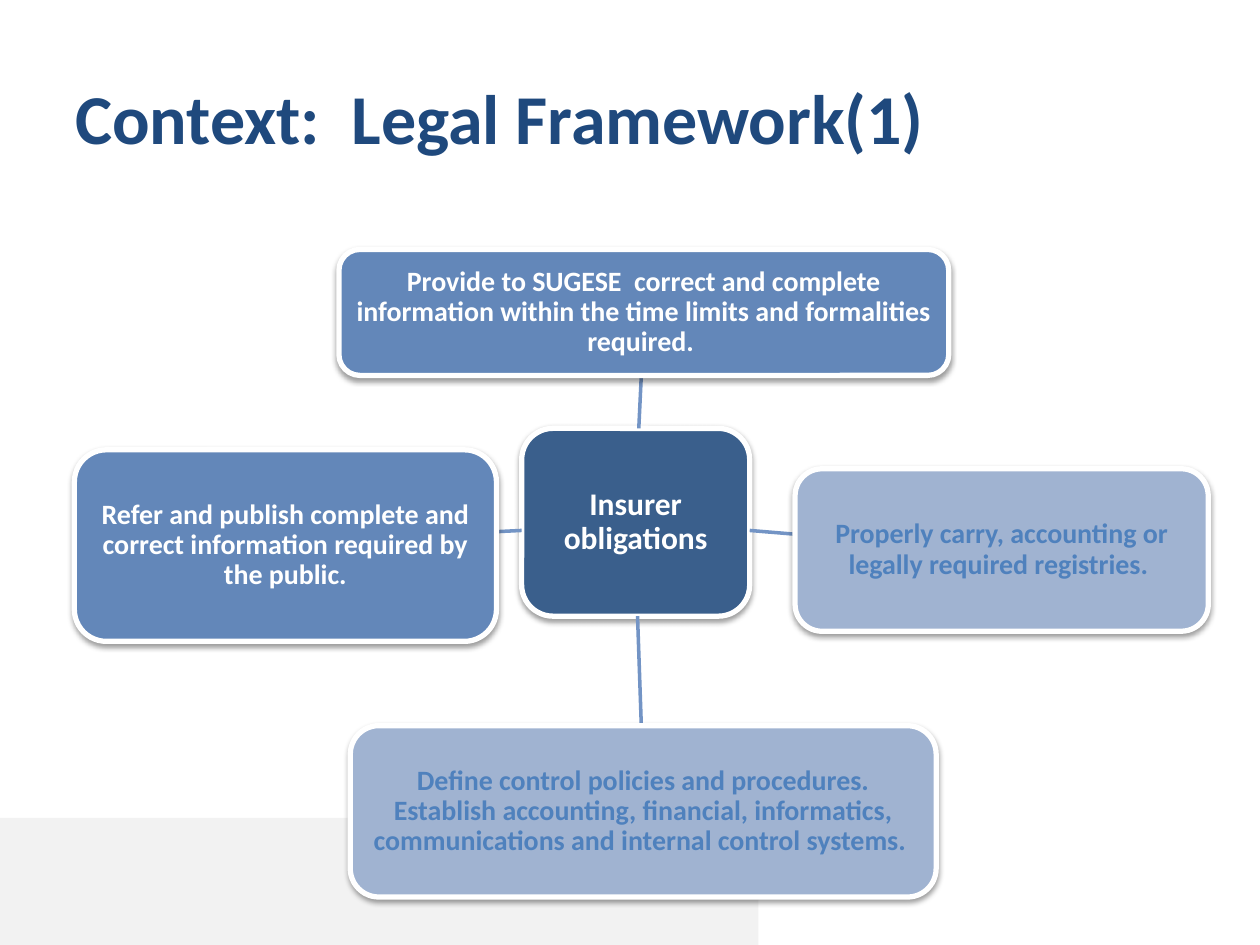
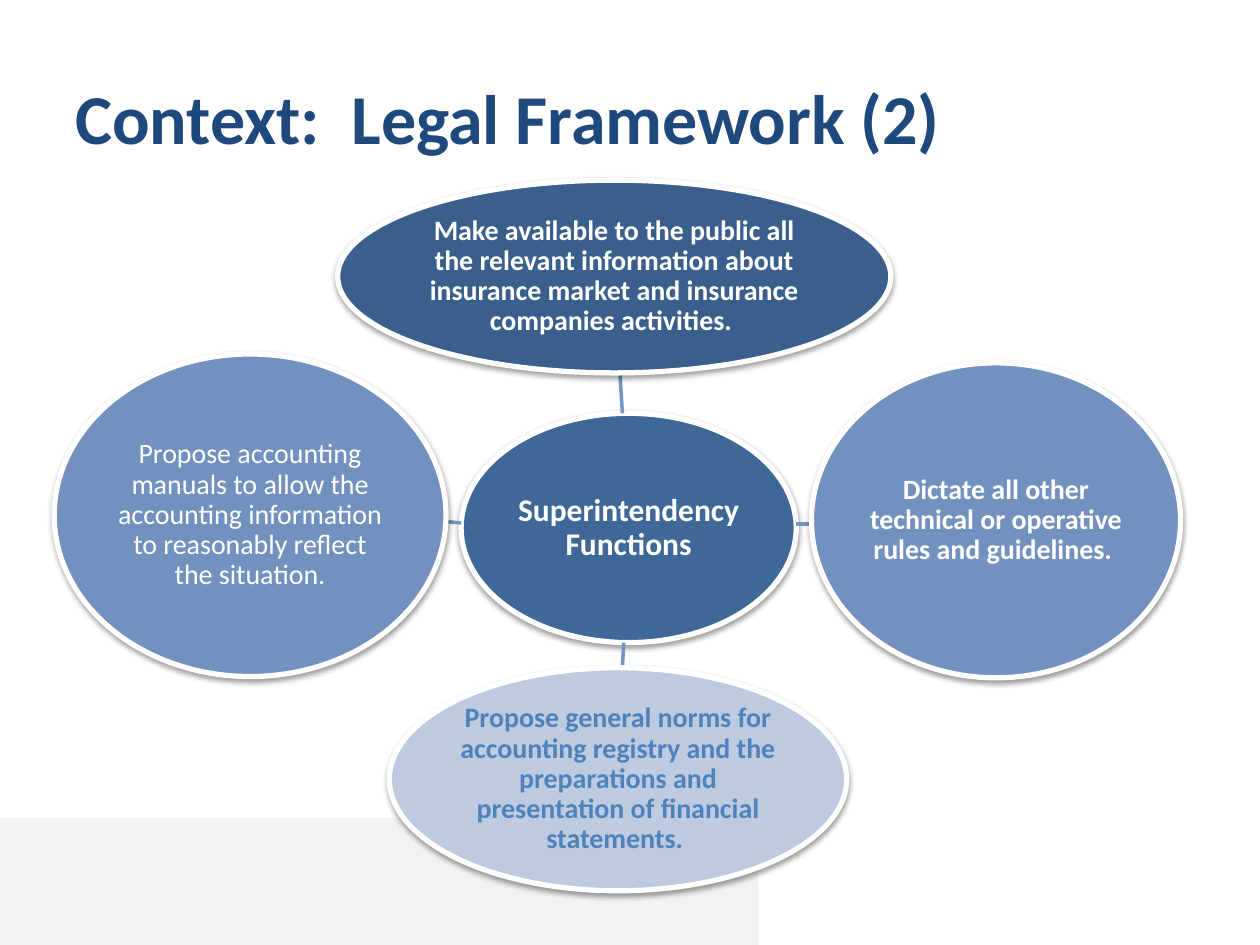
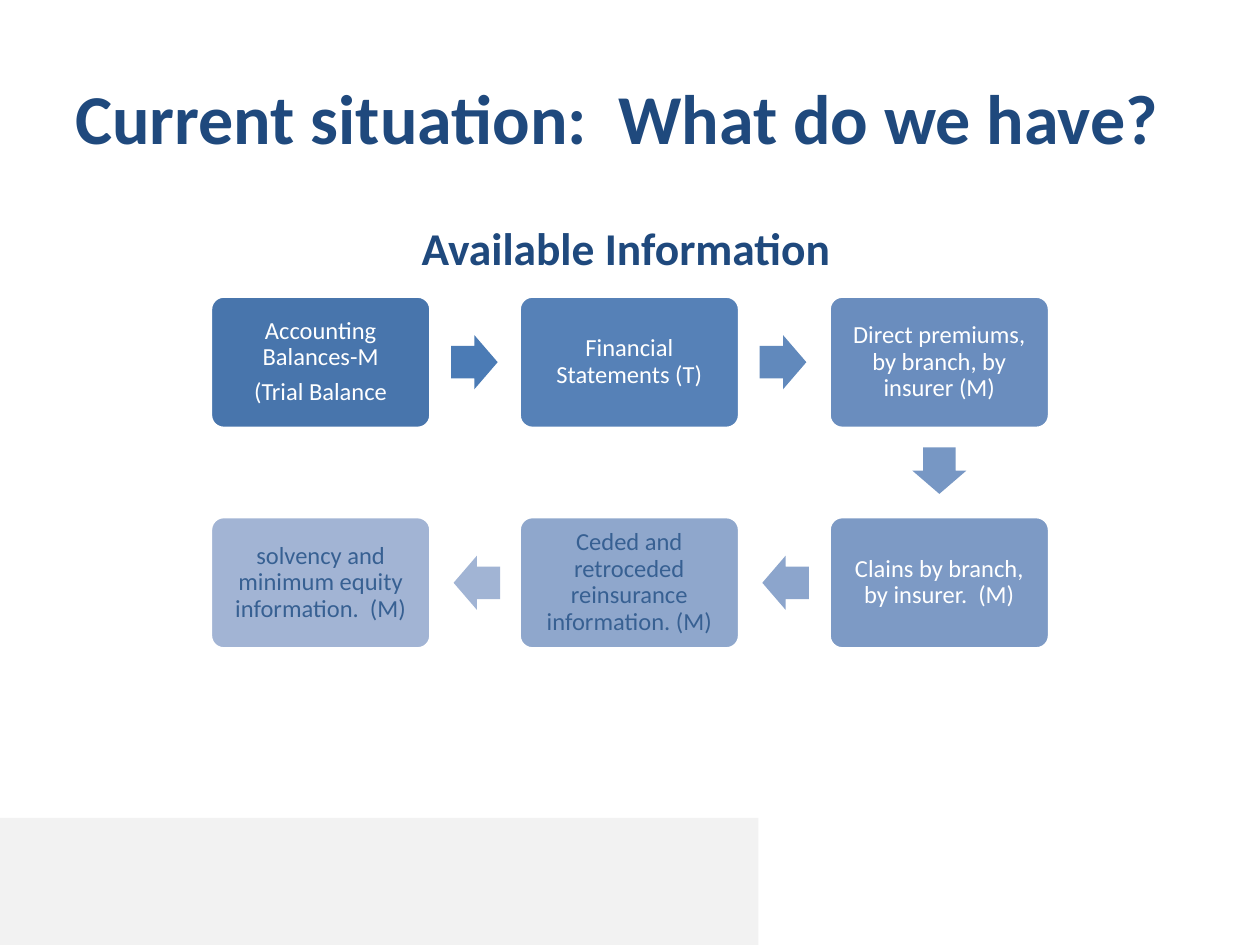
from lxml import etree
from pptx import Presentation
from pptx.dml.color import RGBColor
from pptx.enum.shapes import MSO_CONNECTOR, MSO_SHAPE
from pptx.enum.text import MSO_ANCHOR as ANCHOR, PP_ALIGN as ALIGN
from pptx.oxml import parse_xml
from pptx.oxml.ns import nsdecls, qn
from pptx.util import Emu, Pt

PX = 9144  # 100 px to the inch
rgb = RGBColor.from_string

FONT = "Calibri"
WHITE, NAVY, BLUE, STEEL = "FFFFFF", "1F497D", "4F81BD", "376092"
DEEP, HUB, MEDIUM, SOFT = "3A5F8C", "3F6797", "6387B9", "7391BF"
PALE, PALEST, LINK, BAND = "A0B3D1", "BECADF", "7394C5", "F2F2F2"

SHADOW = (
    f'<a:outerShdw {nsdecls("a")} blurRad="40000" dist="20000" dir="5400000" rotWithShape="0">'
    '<a:srgbClr val="000000"><a:alpha val="38000"/></a:srgbClr></a:outerShdw>'
)


def add_shape(slide, kind, box, fill, border=0, shadow=False):
    shape = slide.shapes.add_shape(kind, *[Emu(n * PX) for n in box])
    shape.shadow.inherit = False
    shape.fill.solid()
    shape.fill.fore_color.rgb = rgb(fill)
    if border:
        shape.line.color.rgb = rgb(WHITE)
        shape.line.width = Pt(border)
    else:
        shape.line.fill.background()
    if shadow:
        shape._element.spPr.find(qn("a:effectLst")).append(parse_xml(SHADOW))
    return shape


def write(shape, lines, size, color, bold=True, align=ALIGN.CENTER,
          anchor=ANCHOR.MIDDLE, inset=None, tight=True):
    frame = shape.text_frame
    frame.word_wrap = True
    frame.vertical_anchor = anchor
    if inset is not None:
        frame.margin_left = frame.margin_right = Emu(inset * PX)
        frame.margin_top = frame.margin_bottom = Emu(inset * PX)
    frame.text = lines
    for paragraph in frame.paragraphs:
        paragraph.alignment = align
        if tight:
            paragraph.line_spacing = 0.9
            paragraph.space_after = Pt(round(0.35 * size, 1))
        font = paragraph.font
        font.name, font.size, font.bold = FONT, Pt(size), bold
        font.color.rgb = rgb(color)


presentation = Presentation()
presentation.slide_width, presentation.slide_height = Emu(1000 * PX), Emu(750 * PX)

# Band and title on every slide
slides = []
for title in ("Context:  Legal Framework(1)", "Context:  Legal Framework (2)",
              "Current situation:  What do we have?"):
    slide = presentation.slides.add_slide(presentation.slide_layouts[6])
    add_shape(slide, MSO_SHAPE.RECTANGLE, (0, 649, 602, 101), BAND)
    title_box = slide.shapes.add_textbox(*[Emu(n * PX) for n in (50, 30, 900, 125)])
    write(title_box, title, 40, NAVY, align=ALIGN.LEFT, tight=False)
    slides.append(slide)

# Slides 1 and 2: a hub and four spokes; each node is box, fill, text, ink, bold
obligations = [
    ((414, 340, 181, 149), DEEP, "Insurer obligations", WHITE, True),
    ((269, 198, 484, 100), MEDIUM,
     "Provide to SUGESE  correct and complete information within the time limits "
     "and formalities required. ", WHITE, True),
    ((631, 372, 328, 129), PALE,
     "Properly carry, accounting or legally required registries. ", BLUE, True),
    ((278, 576, 465, 136), PALE,
     "Define control policies and procedures. Establish accounting, financial, "
     "informatics, communications and internal control systems. ", BLUE, True),
    ((59, 357, 335, 152), MEDIUM,
     "Refer and publish complete and correct information required by the public.",
     WHITE, True),
]
functions = [
    ((366, 328, 266, 182), HUB, "Superintendency Functions", WHITE, True),
    ((268, 143, 439, 153), DEEP,
     "Make available to the public all the relevant information about insurance "
     "market and insurance companies activities. ", WHITE, True),
    ((644, 288, 293, 250), SOFT,
     "Dictate all other technical or operative rules and guidelines. ", WHITE, True),
    ((309, 530, 363, 177), PALEST,
     "Propose general norms for accounting registry and the preparations and "
     "presentation of financial statements. ", BLUE, True),
    ((43, 281, 311, 256), SOFT,
     "Propose accounting manuals to allow the accounting information to reasonably "
     "reflect the situation.", WHITE, False),
]
for slide, kind, inset, nodes in (
    (slides[0], MSO_SHAPE.ROUNDED_RECTANGLE, 4, obligations),
    (slides[1], MSO_SHAPE.OVAL, 1, functions),
):
    hub_box = nodes[0][0]
    for index, (box, fill, text, ink, bold) in enumerate(nodes):
        if index:
            # The link follows the line between centres, cut at both edges
            centers = [(x + w / 2, y + h / 2) for x, y, w, h in (hub_box, box)]
            dx, dy = centers[1][0] - centers[0][0], centers[1][1] - centers[0][1]
            ends = []
            for (x, y), (_, _, w, h), sign in zip(centers, (hub_box, box), (1, -1)):
                reach = sign / max(2 * abs(dx) / w, 2 * abs(dy) / h)
                ends += [x + dx * reach, y + dy * reach]
            link = slide.shapes.add_connector(
                MSO_CONNECTOR.STRAIGHT, *[Emu(round(n) * PX) for n in ends])
            link.line.color.rgb = rgb(LINK)
            link.line.width = Pt(2)
            etree.SubElement(link._element.spPr, qn("a:effectLst"))
        node = add_shape(slide, kind, box, fill, border=3, shadow=True)
        write(node, text, 16 if index else 18, ink, bold, inset=inset)

# Slide 3: subtitle
slide = slides[2]
subtitle = slide.shapes.add_textbox(*[Emu(n * PX) for n in (47, 170, 900, 55)])
write(subtitle, "Available Information", 26, NAVY, anchor=ANCHOR.TOP, tight=False)

# Cards: column, row, fill, ink, text
columns, rows = (167, 412, 658), (235, 410)
cards = [
    (0, 0, "4875AC", WHITE, "Accounting Balances-M\n(Trial Balance"),
    (1, 0, "5681B7", WHITE, "Financial Statements (T)"),
    (2, 0, "6A8DBE", WHITE, "Direct premiums, by branch, by insurer (M)"),
    (2, 1, "7D9AC5", WHITE, "Clains by branch, by insurer.  (M)"),
    (1, 1, "8FA7CC", STEEL, "Ceded and retroceded reinsurance information. (M)"),
    (0, 1, "A2B4D4", STEEL, "solvency and minimum equity information.  (M)"),
]
for column, row, fill, ink, text in cards:
    card = add_shape(slide, MSO_SHAPE.ROUNDED_RECTANGLE,
                     (columns[column], rows[row], 175, 105), fill, border=2)
    card.adjustments[0] = 0.1
    write(card, text, 14, ink, bold=False, inset=6)

# Arrows from card to card: left, top, rotation, fill
for left, top, rotation, fill in (
    (358, 266, 0, "4B7BB5"), (603, 266, 0, "6189BC"), (727, 352, 90, "7797C4"),
    (605, 441, 180, "8CA5CC"), (360, 441, 180, "A1B4D4"),
):
    arrow = add_shape(slide, MSO_SHAPE.RIGHT_ARROW, (left, top, 37, 43), fill)
    arrow.adjustments[0], arrow.adjustments[1] = 0.6, 0.5
    arrow.rotation = rotation

presentation.save("out.pptx")
